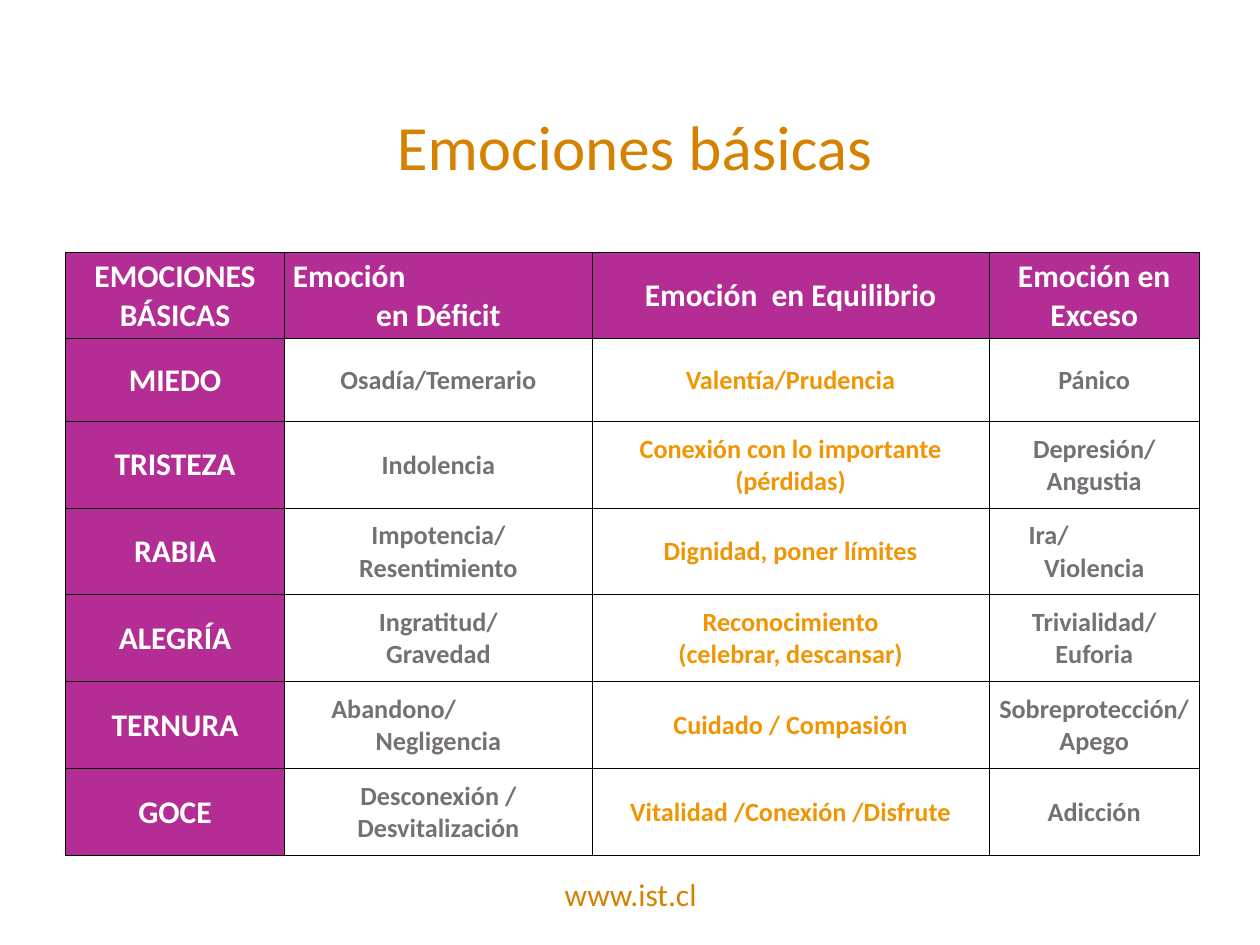
from lxml.etree import SubElement
from pptx import Presentation
from pptx.dml.color import RGBColor
from pptx.enum.text import MSO_ANCHOR as Anchor, PP_ALIGN as Align
from pptx.oxml.ns import qn
from pptx.util import Pt

# Content: one tuple per row, a line break starts a new paragraph
TITLE = "Emociones básicas"
SITE = "www.ist.cl"
ROWS = [
    ("EMOCIONES BÁSICAS", "Emoción\nen Déficit", "Emoción  en Equilibrio", "Emoción en Exceso"),
    ("MIEDO", "Osadía/Temerario", "Valentía/Prudencia", "Pánico"),
    ("TRISTEZA", "Indolencia", "Conexión con lo importante (pérdidas)", "Depresión/ Angustia"),
    ("RABIA", "Impotencia/\nResentimiento", "Dignidad, poner límites", "Ira/\nViolencia"),
    ("ALEGRÍA", "Ingratitud/\nGravedad", "Reconocimiento\n(celebrar, descansar)",
     "Trivialidad/\nEuforia"),
    ("TERNURA", "Abandono/\nNegligencia", "Cuidado / Compasión", "Sobreprotección/\nApego"),
    ("GOCE", "Desconexión /\nDesvitalización", "Vitalidad /Conexión /Disfrute", "Adicción"),
]
# First lines set to the left, with their indent in points
INDENTS = {"Emoción": 4, "Ira/": 22, "Abandono/": 26}

WIDTHS = (125.3, 175.7, 226.8, 120.2)
HEIGHTS = (49.65, 47) + (49.65,) * 5
FONT = "Calibri"
OCHRE, PURPLE, WHITE, BLACK = "D58200", "B42D94", "FFFFFF", "000000"
GREY, ORANGE = "767171", "F09503"


def paint(color, code):
    color.rgb = RGBColor.from_string(code)


def style(par, size, code, bold=False, align=Align.CENTER):
    par.alignment = align
    for run in par.runs:
        font = run.font
        font.name, font.size, font.bold = FONT, Pt(size), bold
        paint(font.color, code)


def place(shape, left, top, width, height):
    shape.left, shape.top = Pt(left), Pt(top)
    shape.width, shape.height = Pt(width), Pt(height)


def write(shape, text, size):
    frame = shape.text_frame
    frame.text = text
    frame.word_wrap = True
    frame.vertical_anchor = Anchor.MIDDLE
    style(frame.paragraphs[0], size, OCHRE)


def border(cell):
    props = cell._tc.get_or_add_tcPr()
    for i, side in enumerate(("a:lnL", "a:lnR", "a:lnT", "a:lnB")):
        line = SubElement(props, qn(side), w=str(Pt(0.5)))
        fill = SubElement(line, qn("a:solidFill"))
        SubElement(fill, qn("a:srgbClr"), val=BLACK)
        props.insert(i, line)


def fill_cell(cell, text, row, col):
    head = row == 0 or col == 0
    cell.margin_left = cell.margin_right = cell.margin_top = Pt(0.7)
    cell.margin_bottom = Pt(0)
    cell.vertical_anchor = Anchor.MIDDLE
    if head:
        cell.fill.solid()
        paint(cell.fill.fore_color, PURPLE)
    else:
        cell.fill.background()
    border(cell)
    cell.text_frame.text = text
    size = 18 if head else 15
    code = WHITE if head else ORANGE if col == 2 else GREY
    for par in cell.text_frame.paragraphs:
        dent = INDENTS.get(par.text)
        style(par, size, code, True, Align.LEFT if dent else Align.CENTER)
        if dent:
            par._p.get_or_add_pPr().set("marL", str(Pt(dent)))


def main():
    deck = Presentation()
    deck.slide_width, deck.slide_height = Pt(720), Pt(540)
    slide = deck.slides.add_slide(deck.slide_layouts[5])
    shapes = slide.shapes

    # Title and web address
    place(shapes.title, 161.3, 57.6, 402.5, 51)
    write(shapes.title, TITLE, 36)
    site = shapes.add_textbox(Pt(258.5), Pt(496), Pt(203.8), Pt(29))
    write(site, SITE, 18)

    # Table of emotions
    table = shapes.add_table(len(ROWS), len(WIDTHS), Pt(37.4), Pt(144),
                             Pt(sum(WIDTHS)), Pt(sum(HEIGHTS))).table
    for col, width in zip(table.columns, WIDTHS):
        col.width = Pt(width)
    for r, (texts, height) in enumerate(zip(ROWS, HEIGHTS)):
        table.rows[r].height = Pt(height)
        for c, text in enumerate(texts):
            fill_cell(table.cell(r, c), text, r, c)

    deck.save("out.pptx")


if __name__ == "__main__":
    main()
